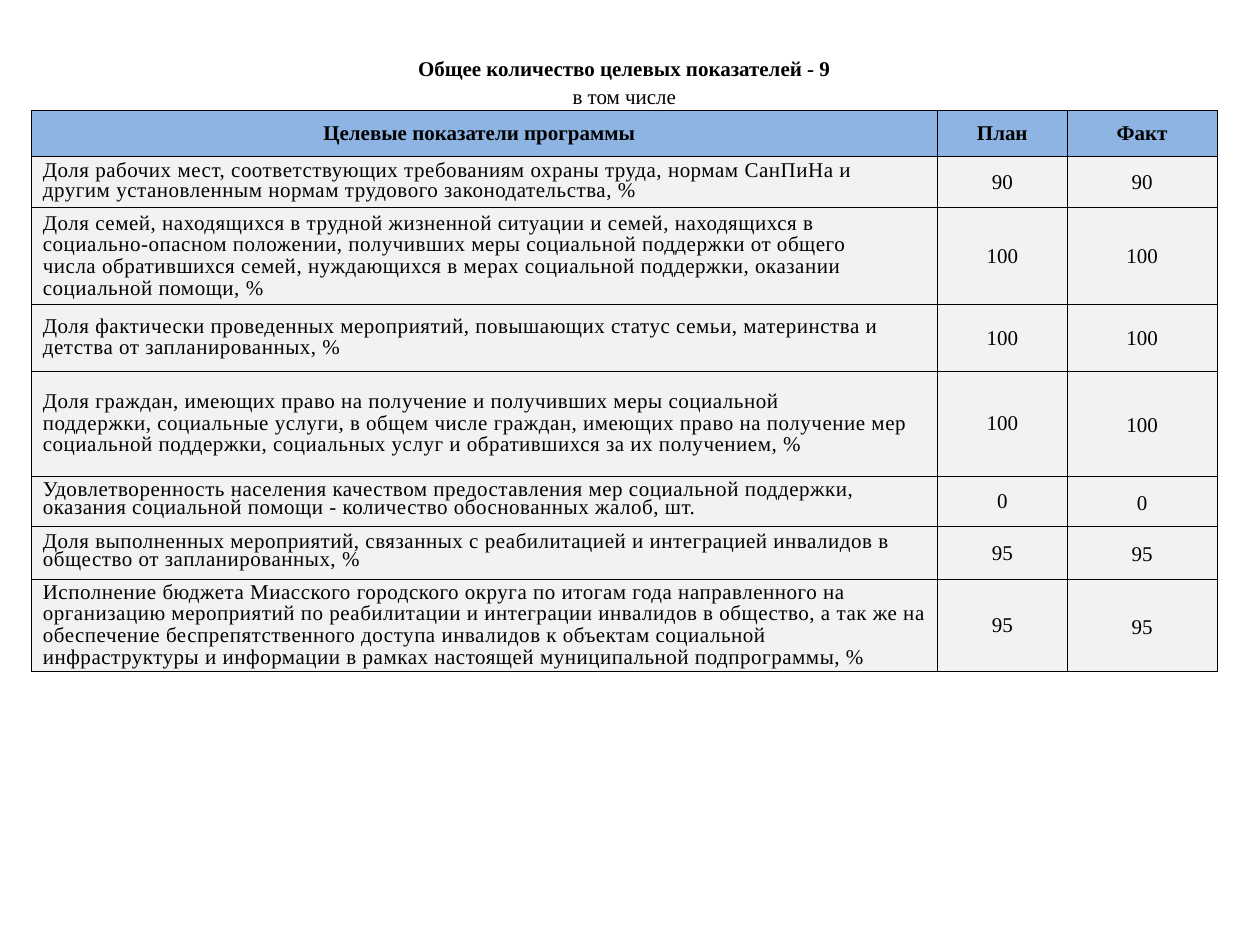
from dataclasses import dataclass

from lxml.etree import SubElement
from pptx import Presentation
from pptx.dml.color import RGBColor
from pptx.enum.text import MSO_ANCHOR, PP_ALIGN
from pptx.oxml.ns import qn
from pptx.util import Inches, Pt


@dataclass(frozen=True)
class Theme:
    font: str = "Times New Roman"
    size: int = 12
    text: str = "000000"
    border: str = "000000"
    border_pt: float = 0.5
    header: str = "8EB4E3"
    body: str = "F2F2F2"


class Deck:
    """Holds the theme and the current slide; lengths are shares of the slide."""

    def __init__(self, theme, width=10, height=7.5):
        self.theme = theme
        self.prs = Presentation()
        self.prs.slide_width, self.prs.slide_height = Inches(width), Inches(height)
        self.s = self.prs.slides.add_slide(self.prs.slide_layouts[6])

    def x(self, share):
        return round(self.prs.slide_width * share)

    def y(self, share):
        return round(self.prs.slide_height * share)

    def table(self, left, top, cols, rows):
        frame = self.s.shapes.add_table(
            len(rows), len(cols), self.x(left), self.y(top),
            self.x(sum(cols)), self.y(sum(rows)))
        table = frame.table
        for column, share in zip(table.columns, cols):
            column.width = self.x(share)
        for row, share in zip(table.rows, rows):
            row.height = self.y(share)
        return table

    def cell(self, cell, text="", fill=None, edges="LRTB", margins=(0.01, 0, 0.01, 0),
             anchor=MSO_ANCHOR.MIDDLE, align=PP_ALIGN.CENTER, bold=False,
             leading=None, indent=0, spacing=0):
        sides = ("margin_left", "margin_top", "margin_right", "margin_bottom")
        for side, value in zip(sides, margins):
            setattr(cell, side, Inches(value))
        cell.vertical_anchor = anchor
        if fill:
            cell.fill.solid()
            cell.fill.fore_color.rgb = RGBColor.from_string(fill)
        else:
            cell.fill.background()
        self.borders(cell, edges)

        p = cell.text_frame.paragraphs[0]
        p.text = text
        for name, value in {"alignment": align, "line_spacing": leading}.items():
            setattr(p, name, value)
        if indent:
            pPr = p._p.get_or_add_pPr()
            pPr.set("marL", str(Inches(indent)))
            pPr.set("indent", "0")
        style = {"name": self.theme.font, "size": Pt(self.theme.size), "bold": bold}
        for r in p.runs:
            for name, value in style.items():
                setattr(r.font, name, value)
            r.font.color.rgb = RGBColor.from_string(self.theme.text)
            if spacing:
                r.font._element.set("spc", str(round(spacing * 100)))

    def borders(self, cell, edges):
        tcPr = cell._tc.get_or_add_tcPr()
        for i, edge in enumerate("LRTB"):
            ln = SubElement(tcPr, qn(f"a:ln{edge}"), w=str(Pt(self.theme.border_pt)))
            if edge in edges:
                solid = SubElement(ln, qn("a:solidFill"))
                SubElement(solid, qn("a:srgbClr"), val=self.theme.border)
            else:
                SubElement(ln, qn("a:noFill"))
            tcPr.insert(i, ln)  # border lines come before the fill


# Indicator, line spacing in points, plan, fact, row height in inches
INDICATORS = [
    ("Доля рабочих мест, соответствующих требованиям охраны труда, нормам СанПиНа и\v"
     "другим установленным нормам трудового законодательства, %", 11.4, 90, 90, 0.41),
    ("Доля семей, находящихся в трудной жизненной ситуации и семей, находящихся в\v"
     "социально-опасном положении, получивших меры социальной поддержки от общего\v"
     "числа обратившихся семей, нуждающихся в мерах социальной поддержки, оказании "
     "социальной помощи, %", 12.4, 100, 100, 0.77),
    ("Доля фактически проведенных мероприятий, повышающих статус семьи, материнства и "
     "детства от запланированных, %", 11.8, 100, 100, 0.53),
    ("Доля граждан, имеющих право на получение и получивших меры социальной\v"
     "поддержки, социальные услуги, в общем числе граждан, имеющих право на получение мер "
     "социальной поддержки, социальных услуг и обратившихся за их получением, %",
     12.4, 100, 100, 0.83),
    ("Удовлетворенность населения качеством предоставления мер социальной поддержки,\v"
     "оказания социальной помощи - количество обоснованных жалоб, шт.", 10.1, 0, 0, 0.4),
    ("Доля выполненных мероприятий, связанных с реабилитацией и интеграцией инвалидов в "
     "общество от запланированных, %", 10.3, 95, 95, 0.42),
    ("Исполнение бюджета Миасского городского округа по итогам года направленного на "
     "организацию мероприятий по реабилитации и интеграции инвалидов в общество, а так же на "
     "обеспечение беспрепятственного доступа инвалидов к объектам социальной\v"
     "инфраструктуры и информации в рамках настоящей муниципальной подпрограммы, %",
     12.4, 95, 95, 0.73),
]


def main():
    theme = Theme()
    deck = Deck(theme)
    heights = [0.41, 0.22, 0.36] + [row[-1] for row in INDICATORS]
    table = deck.table(0.025, 0.25 / 7.5, [0.719, 0.103, 0.119],
                       [h / 7.5 for h in heights])

    # Heading rows across the whole table
    headings = [
        ("Общее количество целевых показателей - 9",
         {"bold": True, "edges": "", "anchor": MSO_ANCHOR.BOTTOM,
          "margins": (0.01, 0, 0.01, 0.02)}),
        ("в том числе", {"edges": "B"}),
    ]
    for i, (text, look) in enumerate(headings):
        table.cell(i, 0).merge(table.cell(i, 2))
        for j in range(3):
            deck.cell(table.cell(i, j), "" if j else text, **look)

    # Column headers
    for j, text in enumerate(["Целевые показатели программы", "План", "Факт"]):
        deck.cell(table.cell(2, j), text, theme.header, bold=True,
                  margins=(0.01, 0, 0.01 if j else 0.09, 0))

    # Indicators with planned and actual values
    wide, narrow = (0.13, 0.04, 0.13, 0.04), (0.1, 0, 0.1, 0)
    for i, (text, leading, plan, fact, _) in enumerate(INDICATORS):
        row = i + 3
        deck.cell(table.cell(row, 0), text, theme.body, margins=(0, 0, 0, 0),
                  align=PP_ALIGN.LEFT, leading=Pt(leading), indent=0.09, spacing=0.3)
        deck.cell(table.cell(row, 1), str(plan), theme.body, margins=wide)
        deck.cell(table.cell(row, 2), str(fact), theme.body,
                  margins=wide if i < 2 else narrow, leading=1.15 if i > 2 else None)

    deck.prs.save("out.pptx")


if __name__ == "__main__":
    main()
